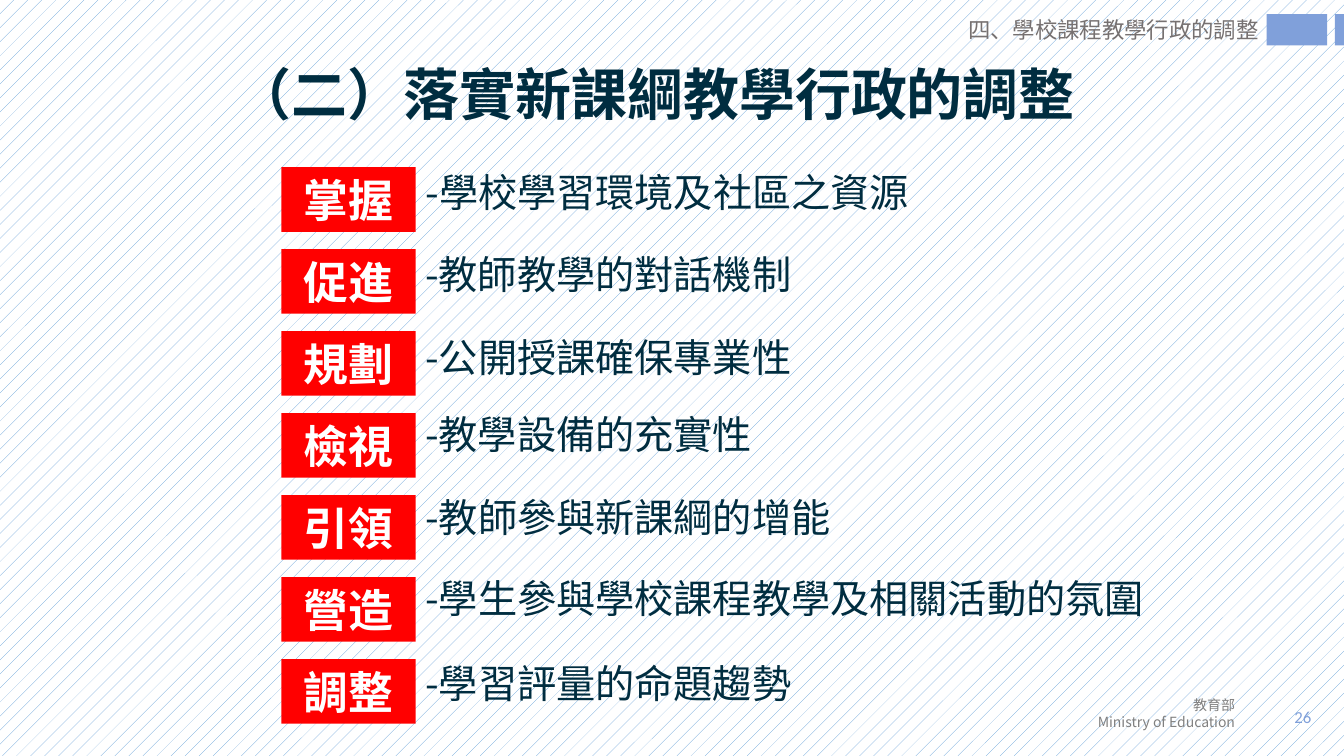
"""Builds the slide on adjusting teaching administration for the new curriculum."""
import pptx
import pptx.util
import pptx.dml.color
import pptx.enum.dml
import pptx.enum.shapes
import pptx.enum.text
import pptx.oxml.ns
import lxml.etree

COLORS = {"navy": "002D40", "red": "FF0000", "white": "FFFFFF", "blue": "80A0DA",
          "pattern": "5B9BD5", "header": "767171", "footer": "808080"}
CJK = "Noto Sans CJK SC"
ALIGN = pptx.enum.text.PP_ALIGN
ANCHOR = pptx.enum.text.MSO_ANCHOR
RECTANGLE = pptx.enum.shapes.MSO_SHAPE.RECTANGLE

deck = pptx.Presentation()
deck.slide_width = pptx.util.Inches(13.33)
deck.slide_height = pptx.util.Inches(7.5)
COLUMN = deck.slide_width / 160
ROW = deck.slide_height / 90


def grid(column, row, columns, rows):
    """Turn grid cells into left, top, width and height."""
    return [round(length) for length in (column * COLUMN, row * ROW, columns * COLUMN, rows * ROW)]


def write(box, text, size, color, align=ALIGN.LEFT, anchor=ANCHOR.TOP,
          bold=False, font=CJK, spacing=1.0, wrap=True):
    """Put formatted text into a box."""
    frame = box.text_frame
    frame.text = text
    frame.word_wrap = wrap
    frame.auto_size = pptx.enum.text.MSO_AUTO_SIZE.NONE
    frame.vertical_anchor = anchor
    for para in frame.paragraphs:
        para.alignment = align
        para.line_spacing = spacing
        para.space_before = pptx.util.Pt(0)
        for span in para.runs:
            span.font.size = pptx.util.Pt(size)
            span.font.bold = bold
            span.font.name = font
            span.font.color.rgb = pptx.dml.color.RGBColor.from_string(COLORS[color])
            east_asian = lxml.etree.SubElement(span.font._element, pptx.oxml.ns.qn("a:ea"))
            east_asian.set("typeface", font)


page = deck.slides.add_slide(deck.slide_layouts[1])
backdrop = page.background.fill
backdrop.patterned()
backdrop.pattern = pptx.enum.dml.MSO_PATTERN.PERCENT_5
backdrop.fore_color.rgb = pptx.dml.color.RGBColor.from_string(COLORS["pattern"])
backdrop.back_color.rgb = pptx.dml.color.RGBColor.from_string(COLORS["white"])

title = page.shapes.title
title.left, title.top, title.width, title.height = grid(9, 7.2, 138, 8.7)
write(title, "（二）落實新課綱教學行政的調整", 40, "navy", ALIGN.CENTER, ANCHOR.MIDDLE,
      bold=True, spacing=0.9)

actions = [
    ("掌握", "-學校學習環境及社區之資源", 20.04, 62.5),
    ("促進", "-教師教學的對話機制", 29.88, 48.7),
    ("規劃", "-公開授課確保專業性", 39.72, 58.1),
    ("檢視", "-教學設備的充實性", 48.84, 43.7),
    ("引領", "-教師參與新課綱的增能", 58.8, 52.3),
    ("營造", "-學生參與學校課程教學及相關活動的氛圍", 68.4, 90.5),
    ("調整", "-學習評量的命題趨勢", 78.48, 48.1),
]
badges = []
for index, (verb, detail, row, columns) in enumerate(actions):
    badge = page.shapes.add_shape(RECTANGLE, *grid(33.5, 19.9 + 9.76 * index, 16, 7.7))
    badges.append((badge, "red"))
    write(badge, verb, 32, "white", ALIGN.CENTER, ANCHOR.MIDDLE, bold=True)

    place = grid(49.45, row, columns, 7.7)
    if index == 0:
        box = page.placeholders[1]
        box.left, box.top, box.width, box.height = place
    else:
        box = page.shapes.add_textbox(*place)
    write(box, detail, 28, "navy", spacing=0.9)

body_format = page.placeholders[1].text_frame.paragraphs[0]._p.get_or_add_pPr()
body_format.set("marL", "0")
body_format.set("indent", "0")
lxml.etree.SubElement(body_format, pptx.oxml.ns.qn("a:buNone"))

corner_blocks = [(page.shapes.add_shape(RECTANGLE, *grid(column, 1.68, columns, 3.72)), "blue")
                 for column, columns in [(150.8, 7.2), (158.9, 1.1)]]
for block, color in badges + corner_blocks:
    block.shadow.inherit = False
    block.fill.solid()
    block.fill.fore_color.rgb = pptx.dml.color.RGBColor.from_string(COLORS[color])
    block.line.fill.background()

header = page.shapes.add_textbox(*grid(114.1, 1.3, 43.9, 4.4))
write(header, "四、學校課程教學行政的調整", 16, "header")
number = page.shapes.add_textbox(*grid(130.3, 83.5, 27, 3.6))
write(number, "26", 12, "blue", ALIGN.RIGHT, ANCHOR.MIDDLE, font="Calibri")
footer = page.shapes.add_textbox(*grid(129, 82.3, 19.2, 5.3))
write(footer, "教育部\nMinistry of Education", 10, "footer", ALIGN.RIGHT, wrap=False)

deck.save("out.pptx")
